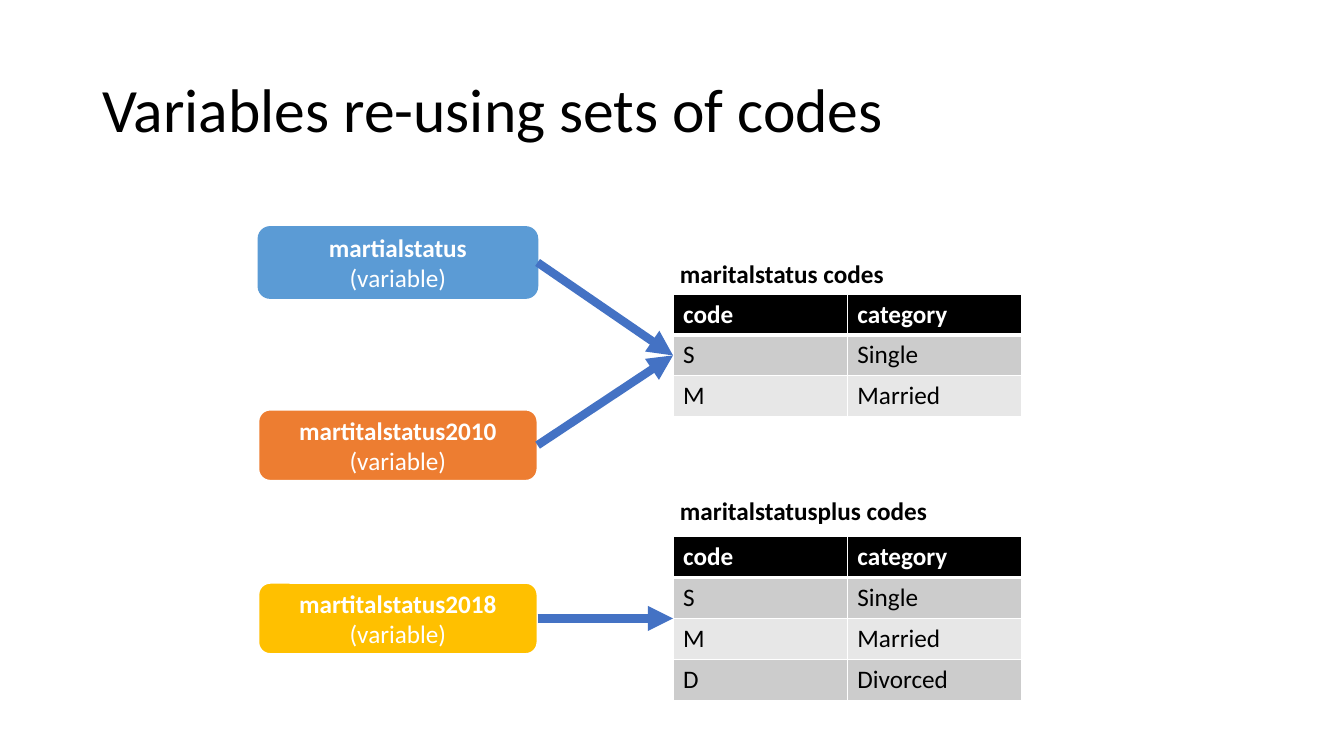
from lxml.etree import SubElement
from pptx import Presentation
from pptx.dml.color import RGBColor
from pptx.enum.shapes import MSO_CONNECTOR as LINK, MSO_SHAPE as SHAPE
from pptx.enum.text import MSO_ANCHOR as ANCHOR, PP_ALIGN as ALIGN
from pptx.oxml.ns import qn
from pptx.util import Pt

SCALE = 9525  # EMU in one px, 96 px to the inch
FONT = "Calibri"
BLACK = RGBColor(0x00, 0x00, 0x00)
WHITE = RGBColor(0xFF, 0xFF, 0xFF)
SKY = RGBColor(0x5B, 0x9B, 0xD5)
ORANGE = RGBColor(0xED, 0x7D, 0x31)
GOLD = RGBColor(0xFF, 0xC0, 0x00)
BLUE = RGBColor(0x44, 0x72, 0xC4)
DARK = RGBColor(0xCC, 0xCC, 0xCC)
LIGHT = RGBColor(0xE7, 0xE7, 0xE7)

ROW_H = 39
COL_W = 166
BOX_X, BOX_W, BOX_H = 246, 266, 68
CODE_X, NAME_X, NAME_W = 641, 638, 277


def px(*nums):
    return [num * SCALE for num in nums]


def set_font(font, size, color, bold=None):
    font.name = FONT
    font.size = Pt(size)
    font.color.rgb = color
    font.bold = bold


def add_title(slide, text):
    frame = slide.shapes.add_textbox(*px(88, 38, 1104, 139)).text_frame
    frame.word_wrap = True
    frame.vertical_anchor = ANCHOR.MIDDLE
    para = frame.paragraphs[0]
    para.text = text
    para.line_spacing = 0.9
    set_font(para.font, 44, BLACK)


def add_box(slide, y, name, fill, edge, width):
    box = slide.shapes.add_shape(
        SHAPE.ROUNDED_RECTANGLE, *px(BOX_X, y, BOX_W, BOX_H))
    box.shadow.inherit = False
    box.fill.solid()
    box.fill.fore_color.rgb = fill
    box.line.color.rgb = edge
    box.line.width = Pt(width)
    frame = box.text_frame
    frame.word_wrap = True
    frame.vertical_anchor = ANCHOR.MIDDLE
    para = frame.paragraphs[0]
    para.alignment = ALIGN.CENTER
    set_font(para.font, 18, WHITE)
    head = para.add_run()
    head.text = name
    head.font.bold = True
    para.add_line_break()
    para.add_run().text = "(variable)"
    return box


def set_edges(cell, top, base):
    props = cell._tc.get_or_add_tcPr()
    for side, width in (("L", 1), ("R", 1), ("T", top), ("B", base)):
        line = SubElement(props, qn("a:ln" + side), w=str(Pt(width)))
        fill = SubElement(line, qn("a:solidFill"))
        SubElement(fill, qn("a:srgbClr"), val=str(WHITE))


def set_cell(cell, text, color, bold, fill, top=1, base=1):
    set_edges(cell, top, base)
    if fill is None:
        cell.fill.background()
    else:
        cell.fill.solid()
        cell.fill.fore_color.rgb = fill
    para = cell.text_frame.paragraphs[0]
    para.text = text
    set_font(para.font, 18, color, bold)


def add_grid(slide, x, y, rows, cols, width):
    frame = slide.shapes.add_table(
        rows, cols, *px(x, y, cols * width, rows * ROW_H))
    frame.table.first_row = False
    frame.table.horz_banding = False
    return frame


def add_name(slide, y, text):
    grid = add_grid(slide, NAME_X, y, 1, 1, NAME_W)
    set_cell(grid.table.cell(0, 0), text, BLACK, True, None, base=3)


def add_codes(slide, y, codes):
    rows = [("code", "category"), *codes]
    grid = add_grid(slide, CODE_X, y, len(rows), 2, COL_W)
    for r, row in enumerate(rows):
        for c, text in enumerate(row):
            cell = grid.table.cell(r, c)
            if r == 0:
                set_cell(cell, text, WHITE, True, BLACK, base=3)
            else:
                fill = DARK if r % 2 else LIGHT
                set_cell(cell, text, BLACK, False, fill, top=3 if r == 1 else 1)
    return grid


def add_arrow(slide, box, grid):
    arrow = slide.shapes.add_connector(LINK.STRAIGHT, 0, 0, 0, 0)
    arrow.begin_connect(box, 3)
    arrow.end_connect(grid, 1)
    arrow.line.color.rgb = BLUE
    arrow.line.width = Pt(6)
    SubElement(arrow.line._get_or_add_ln(), qn("a:tailEnd"), type="triangle")
    SubElement(arrow._element.spPr, qn("a:effectLst"))


def main():
    deck = Presentation()
    deck.slide_width, deck.slide_height = px(1280, 720)
    slide = deck.slides.add_slide(deck.slide_layouts[6])
    add_title(slide, "Variables re-using sets of codes")

    # Code lists
    codes = [("S", "Single"), ("M", "Married")]
    add_name(slide, 242, "maritalstatus codes")
    short = add_codes(slide, 280, codes)
    add_name(slide, 468, "maritalstatusplus codes")
    plus = add_codes(slide, 511, codes + [("D", "Divorced")])

    # Variables, each with an arrow to its code list
    for y, name, fill, edge, width, grid in (
        (216, "martialstatus", SKY, SKY, 1, short),
        (390, "martitalstatus2010", ORANGE, WHITE, 1.5, short),
        (555, "martitalstatus2018", GOLD, WHITE, 1.5, plus),
    ):
        box = add_box(slide, y, name, fill, edge, width)
        add_arrow(slide, box, grid)

    deck.save("out.pptx")


if __name__ == "__main__":
    main()
